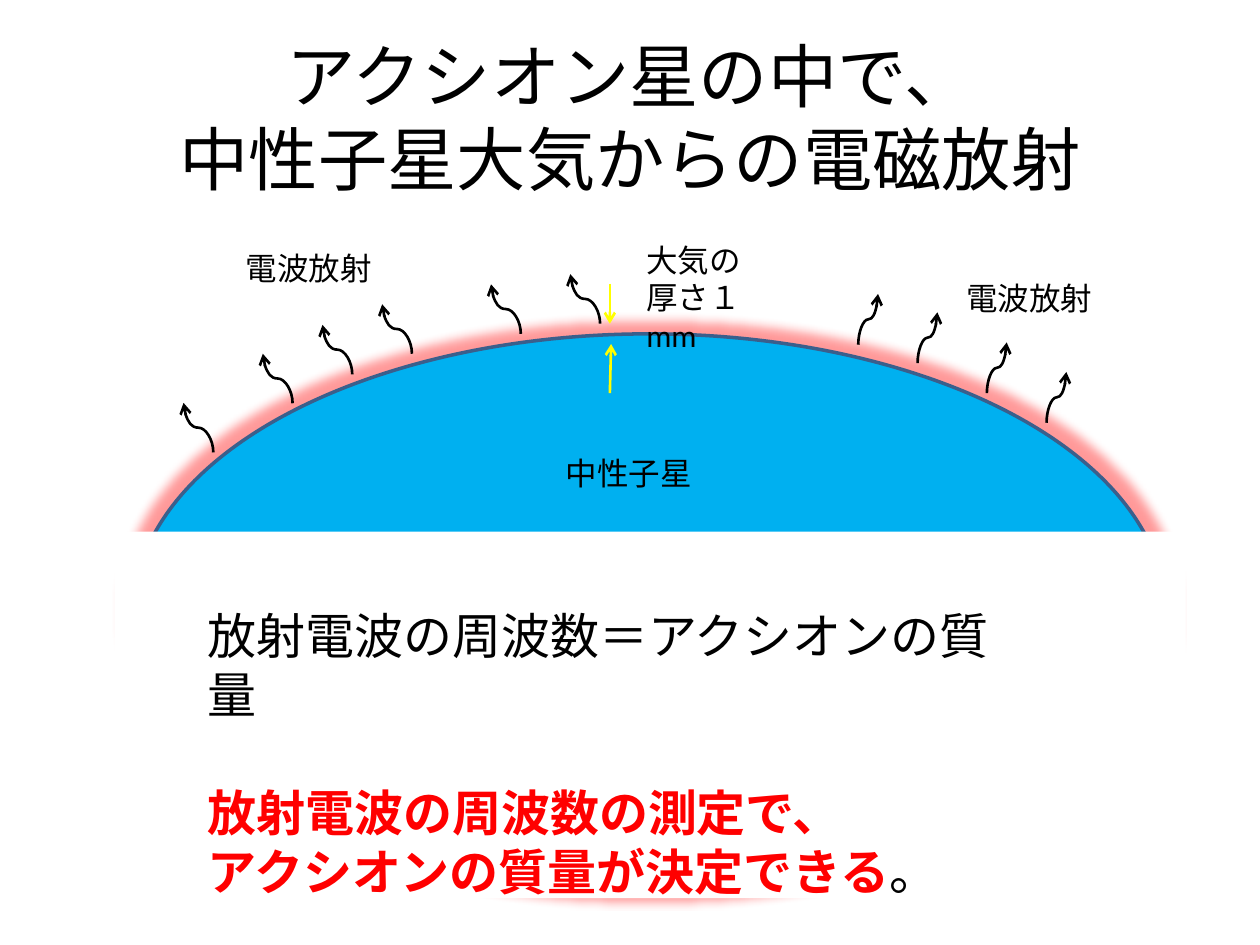
import dataclasses
from typing import List, Optional, Tuple

import lxml.etree
import pptx
import pptx.dml.color
import pptx.enum.dml
import pptx.enum.lang
import pptx.enum.shapes
import pptx.enum.text
import pptx.oxml
import pptx.oxml.ns
import pptx.util

Pt = pptx.util.Pt
RGBColor = pptx.dml.color.RGBColor
CONNECTOR = pptx.enum.shapes.MSO_CONNECTOR
SHAPE = pptx.enum.shapes.MSO_SHAPE
ALIGN = pptx.enum.text.PP_ALIGN
ANCHOR = pptx.enum.text.MSO_ANCHOR

FONT_NAME = "Calibri"
BLACK = RGBColor(0x00, 0x00, 0x00)
WHITE = RGBColor(0xFF, 0xFF, 0xFF)
RED = RGBColor(0xFF, 0x00, 0x00)
YELLOW = RGBColor(0xFF, 0xFF, 0x00)
STAR_BLUE = RGBColor(0x00, 0xB0, 0xF0)
STAR_EDGE = RGBColor(0x3A, 0x5F, 0x8C)


@dataclasses.dataclass(frozen=True)
class Box:
    left: float
    top: float
    width: float
    height: float

    def lengths(self):
        return Pt(self.left), Pt(self.top), Pt(self.width), Pt(self.height)


@dataclasses.dataclass(frozen=True)
class Run:
    text: str
    color: RGBColor = BLACK
    bold: bool = False


@dataclasses.dataclass(frozen=True)
class Line:
    runs: Tuple[Run, ...]
    space_before: float = 0


@dataclasses.dataclass(frozen=True)
class Label:
    text: str
    box: Box


@dataclasses.dataclass(frozen=True)
class WaveStyle:
    width: float
    height: float
    rotation: int
    flip_horizontal: bool


LEFT_WAVE = WaveStyle(17, 28.3, 270, False)
RIGHT_WAVE = WaveStyle(11.3, 29, 90, True)
LEFT_WAVE_STARTS = [(121.9, 258.6), (167.2, 230.5), (201.3, 214), (235.4, 202.2),
                    (297.6, 190.8), (342.9, 185)]
RIGHT_WAVE_STARTS = [(490.4, 197), (524.3, 207.5), (563.9, 224.7), (598, 241.6)]
THICKNESS_ARROWS = [((348.5, 162), (348.5, 185)), ((348.5, 224.6), (349.2, 196.6))]

TITLE_BOX = Box(36, 21.6, 648, 90)
STAR_BOX = Box(76.3, 190.8, 589.7, 317.5)
COVER_BOX = Box(65.5, 303.8, 612, 209.5)
BODY_BOX = Box(111.6, 342.7, 478, 143.3)
LABELS = [
    Label("大気の\n厚さ１mm", Box(362.2, 133.9, 87.8, 51)),
    Label("中性子星", Box(316.1, 255.6, 87.5, 29)),
    Label("電波放射", Box(133.2, 139, 87.5, 29)),
    Label("電波放射", Box(545, 155.9, 87.5, 29)),
]
BODY_LINES = [
    Line((Run("放射電波の周波数＝アクシオンの質量"),)),
    Line((Run("放射電波の周波数の測定で、", RED, True),), space_before=33.6),
    Line((Run("アクシオンの質量が決定できる", RED, True), Run("。"))),
]


def plain_lines(text: str) -> List[Line]:
    return [Line((Run(part),)) for part in text.split("\n")]


def add_text(slide, box: Box, lines: List[Line], *, size: float,
             align=ALIGN.LEFT, anchor=ANCHOR.TOP):
    shape = slide.shapes.add_textbox(*box.lengths())
    frame = shape.text_frame
    frame.word_wrap = True
    frame.vertical_anchor = anchor
    for index, line in enumerate(lines):
        paragraph = frame.add_paragraph() if index else frame.paragraphs[0]
        paragraph.alignment = align
        paragraph.space_before = Pt(line.space_before)
        for part in line.runs:
            run = paragraph.add_run()
            run.text = part.text
            run.font.name = FONT_NAME
            run.font.size = Pt(size)
            run.font.bold = part.bold
            run.font.color.rgb = part.color
            run.font.language_id = pptx.enum.lang.MSO_LANGUAGE_ID.JAPANESE
    return shape


def add_effect_list(shape):
    return lxml.etree.SubElement(shape._element.spPr, pptx.oxml.ns.qn("a:effectLst"))


def add_glow(shape, radius: float, color: RGBColor, opacity: int) -> None:
    effects = shape._element.spPr.find(pptx.oxml.ns.qn("a:effectLst"))
    effects.append(pptx.oxml.parse_xml(
        f'<a:glow {pptx.oxml.ns.nsdecls("a")} rad="{Pt(radius)}"><a:srgbClr val="{color}">'
        f'<a:alpha val="{opacity * 1000}"/></a:srgbClr></a:glow>'))


def add_filled_shape(slide, kind, box: Box, fill: RGBColor, edge: Optional[RGBColor] = None):
    shape = slide.shapes.add_shape(kind, *box.lengths())
    shape.shadow.inherit = False
    shape.fill.solid()
    shape.fill.fore_color.rgb = fill
    if edge is None:
        shape.line.fill.background()
    else:
        shape.line.color.rgb = edge
        shape.line.width = Pt(2)
    return shape


def add_arrow(slide, kind, start: Tuple[float, float], end: Tuple[float, float],
              color: RGBColor):
    arrow = slide.shapes.add_connector(kind, *(Pt(value) for value in start + end))
    arrow.line.color.rgb = color
    arrow.line.width = Pt(1.5)
    tail = lxml.etree.SubElement(arrow.line._get_or_add_ln(), pptx.oxml.ns.qn("a:tailEnd"))
    tail.set("type", "arrow")
    add_effect_list(arrow)
    return arrow


def add_wave(slide, start: Tuple[float, float], style: WaveStyle) -> None:
    side = 1 if style.flip_horizontal else -1
    center_x = start[0] + side * style.width / 2
    center_y = start[1] - style.height / 2
    along = side * style.height / 2
    across = style.width / 2
    arrow = add_arrow(slide, CONNECTOR.CURVE, (center_x + along, center_y + across),
                      (center_x - along, center_y - across), BLACK)
    arrow._element.spPr.xfrm.set("rot", str(style.rotation * 60000))


def main() -> None:
    presentation = pptx.Presentation()
    presentation.slide_width = Pt(720)
    presentation.slide_height = Pt(540)
    slide = presentation.slides.add_slide(presentation.slide_layouts[6])

    add_text(slide, TITLE_BOX, plain_lines("アクシオン星の中で、\n中性子星大気からの電磁放射"),
             size=39.6, align=ALIGN.CENTER, anchor=ANCHOR.MIDDLE)
    star = add_filled_shape(slide, SHAPE.OVAL, STAR_BOX, STAR_BLUE, STAR_EDGE)
    add_glow(star, 11, RED, 40)
    add_filled_shape(slide, SHAPE.RECTANGLE, COVER_BOX, WHITE)

    for start, end in THICKNESS_ARROWS:
        add_arrow(slide, CONNECTOR.STRAIGHT, start, end, YELLOW)
    for starts, style in ((LEFT_WAVE_STARTS, LEFT_WAVE), (RIGHT_WAVE_STARTS, RIGHT_WAVE)):
        for start in starts:
            add_wave(slide, start, style)

    for label in LABELS:
        add_text(slide, label.box, plain_lines(label.text), size=18)
    add_text(slide, BODY_BOX, BODY_LINES, size=28)
    presentation.save("out.pptx")


if __name__ == "__main__":
    main()
